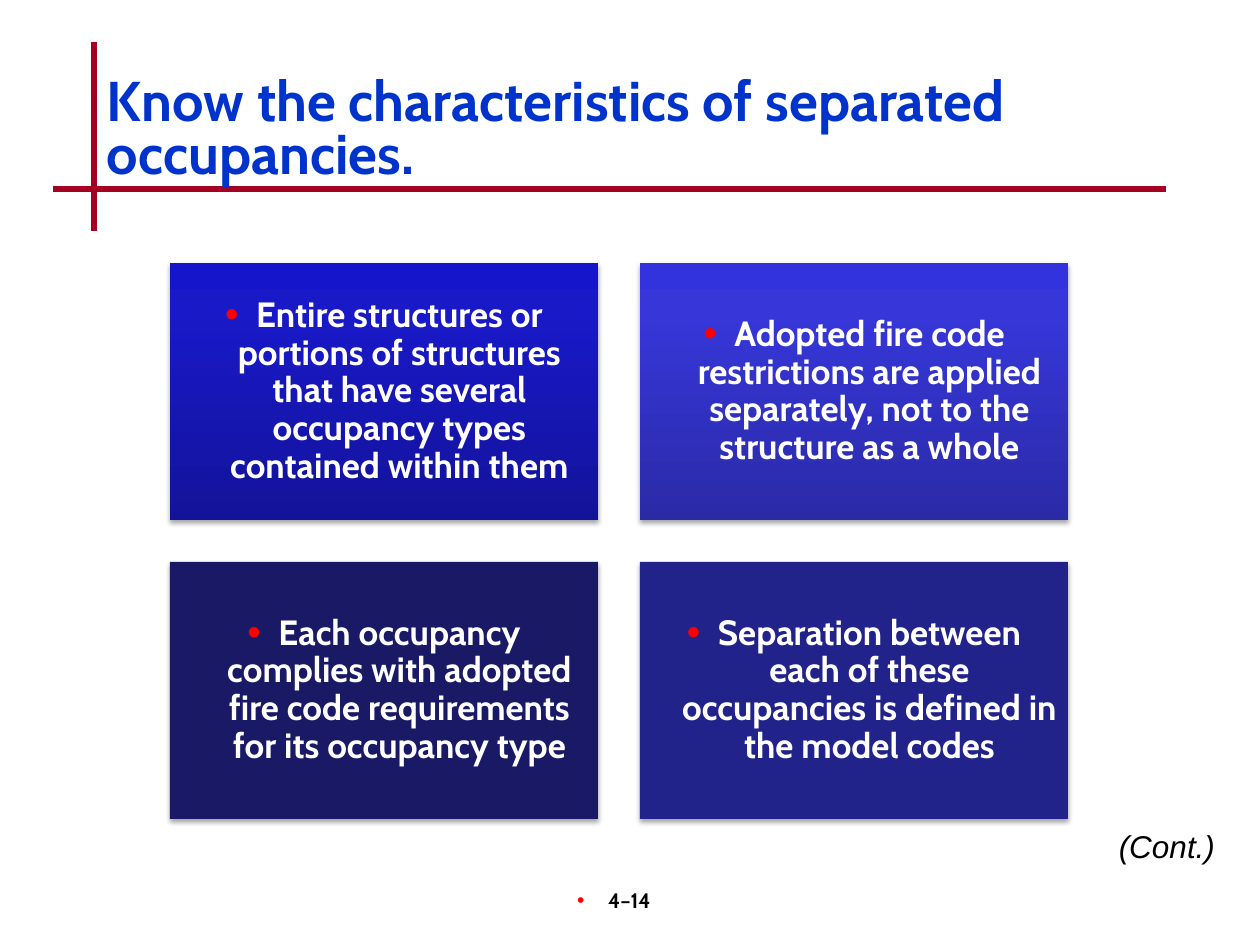
from dataclasses import dataclass

from lxml.etree import SubElement
from pptx import Presentation
from pptx.dml.color import RGBColor
from pptx.enum.shapes import MSO_CONNECTOR as Connector
from pptx.enum.shapes import MSO_SHAPE as Preset
from pptx.enum.text import MSO_ANCHOR as Anchor
from pptx.enum.text import PP_ALIGN as Align
from pptx.oxml.ns import qn
from pptx.util import Pt

EMU_PER_PX = 914400 / 126


@dataclass(frozen=True)
class Theme:
    title: str = "0033CC"
    rule: str = "A50021"
    bullet: str = "FF0000"
    dark: str = "000000"
    light: str = "FFFFFF"
    font: str = "Cabin"
    note_font: str = "Arial"
    title_size: int = 32
    card_size: int = 20
    note_size: int = 18
    number_size: int = 12
    rule_width: int = 3


@dataclass(frozen=True)
class Box:
    left: int
    top: int
    width: int
    height: int


@dataclass(frozen=True)
class Rule:
    x1: int
    y1: int
    x2: int
    y2: int


@dataclass(frozen=True)
class Style:
    size: int
    color: str
    font: str = "Cabin"
    bold: bool = True
    italic: bool = False
    align: Align = Align.LEFT
    anchor: Anchor = Anchor.TOP
    spacing: float = 1.0
    bullet_percent: int = 0
    insets: tuple[int, int, int, int] = (13, 6, 13, 6)


@dataclass(frozen=True)
class Card:
    text: str
    colors: tuple[str, ...]


THEME = Theme()
BULLET_INDENT = 31
GRADIENT_STOPS = (0, 80, 100)
CARD_ORIGIN = (170, 263)
CARD_SIZE = (428, 257)
CARD_GAP = 42
COLUMNS = 2

RULES = (Rule(94, 42, 94, 231), Rule(53, 189, 1166, 189))
CARDS = (
    Card("Entire structures or portions of structures that have several "
         "occupancy types contained within them", ("13139A", "1919C8", "1515CC")),
    Card("Adopted fire code restrictions are applied separately, not to the "
         "structure as a whole", ("2A2AA7", "3636D9", "3333DD")),
    Card("Each occupancy complies with adopted fire code requirements for its "
         "occupancy type", ("191966",)),
    Card("Separation between each of these occupancies is defined in the "
         "model codes", ("22228B",)),
)

TITLE_STYLE = Style(THEME.title_size, THEME.title, anchor=Anchor.MIDDLE, spacing=0.8)
CARD_STYLE = Style(THEME.card_size, THEME.light, align=Align.CENTER,
                   anchor=Anchor.MIDDLE, spacing=0.9, bullet_percent=110,
                   insets=(10, 10, 10, 10))
NOTE_STYLE = Style(THEME.note_size, THEME.dark, THEME.note_font, bold=False,
                   italic=True, align=Align.RIGHT)
NUMBER_STYLE = Style(THEME.number_size, THEME.dark, align=Align.CENTER,
                     bullet_percent=100, insets=(13, 6, 35, 6))


def px(length: int) -> int:
    return round(length * EMU_PER_PX)


def place(box: Box) -> tuple[int, ...]:
    return tuple(px(side) for side in (box.left, box.top, box.width, box.height))


def add_bullet(paragraph, percent: int) -> None:
    properties = paragraph._p.get_or_add_pPr()
    properties.set("marL", str(px(BULLET_INDENT)))
    properties.set("indent", str(-px(BULLET_INDENT)))
    color = SubElement(properties, qn("a:buClr"))
    SubElement(color, qn("a:srgbClr"), val=THEME.bullet)
    SubElement(properties, qn("a:buSzPct"), val=str(percent * 1000))
    SubElement(properties, qn("a:buFont"), typeface=THEME.note_font)
    SubElement(properties, qn("a:buChar"), char="•")


def write_text(shape, text: str, style: Style) -> None:
    frame = shape.text_frame
    frame.word_wrap = True
    frame.vertical_anchor = style.anchor
    (frame.margin_left, frame.margin_top,
     frame.margin_right, frame.margin_bottom) = map(px, style.insets)
    paragraph = frame.paragraphs[0]
    if style.bullet_percent:
        add_bullet(paragraph, style.bullet_percent)
    paragraph.alignment = style.align
    paragraph.line_spacing = style.spacing
    run = paragraph.add_run()
    run.text = text
    run.font.name = style.font
    run.font.size = Pt(style.size)
    run.font.bold = style.bold
    run.font.italic = style.italic
    run.font.color.rgb = RGBColor.from_string(style.color)


def add_text(slide, box: Box, text: str, style: Style) -> None:
    write_text(slide.shapes.add_textbox(*place(box)), text, style)


def add_rule(slide, rule: Rule) -> None:
    ends = map(px, (rule.x1, rule.y1, rule.x2, rule.y2))
    connector = slide.shapes.add_connector(Connector.STRAIGHT, *ends)
    connector.line.color.rgb = RGBColor.from_string(THEME.rule)
    connector.line.width = Pt(THEME.rule_width)
    SubElement(connector._element.spPr, qn("a:effectLst"))


def fill_card(shape, colors: tuple[str, ...]) -> None:
    if len(colors) == 1:
        shape.fill.solid()
        shape.fill.fore_color.rgb = RGBColor.from_string(colors[0])
        return
    gradient = SubElement(shape._element.spPr, qn("a:gradFill"), rotWithShape="1")
    stops = SubElement(gradient, qn("a:gsLst"))
    for position, color in zip(GRADIENT_STOPS, colors):
        stop = SubElement(stops, qn("a:gs"), pos=str(position * 1000))
        SubElement(stop, qn("a:srgbClr"), val=color)
    SubElement(gradient, qn("a:lin"), ang=str(270 * 60000), scaled="0")


def add_shadow(shape) -> None:
    shape.shadow.inherit = False
    effects = shape._element.spPr.find(qn("a:effectLst"))
    shadow = SubElement(effects, qn("a:outerShdw"), blurRad=str(Pt(3.1)),
                        dist=str(Pt(1.8)), dir=str(90 * 60000), rotWithShape="0")
    color = SubElement(shadow, qn("a:srgbClr"), val=THEME.dark)
    SubElement(color, qn("a:alpha"), val="35000")


def add_card(slide, index: int, card: Card) -> None:
    row, column = divmod(index, COLUMNS)
    (left, top), (width, height) = CARD_ORIGIN, CARD_SIZE
    box = Box(left + column * (width + CARD_GAP), top + row * (height + CARD_GAP),
              width, height)
    shape = slide.shapes.add_shape(Preset.RECTANGLE, *place(box))
    fill_card(shape, card.colors)
    shape.line.fill.background()
    add_shadow(shape)
    write_text(shape, card.text, CARD_STYLE)


def main() -> None:
    presentation = Presentation()
    presentation.slide_width, presentation.slide_height = px(1260), px(945)
    slide = presentation.slides.add_slide(presentation.slide_layouts[6])
    for rule in RULES:
        add_rule(slide, rule)
    add_text(slide, Box(494, 882, 262, 63), "4–14", NUMBER_STYLE)
    add_text(slide, Box(94, 69, 1071, 126),
             "Know the characteristics of separated occupancies.", TITLE_STYLE)
    for index, card in enumerate(CARDS):
        add_card(slide, index, card)
    add_text(slide, Box(1018, 821, 210, 50), "(Cont.)", NOTE_STYLE)
    presentation.save("out.pptx")


if __name__ == "__main__":
    main()
